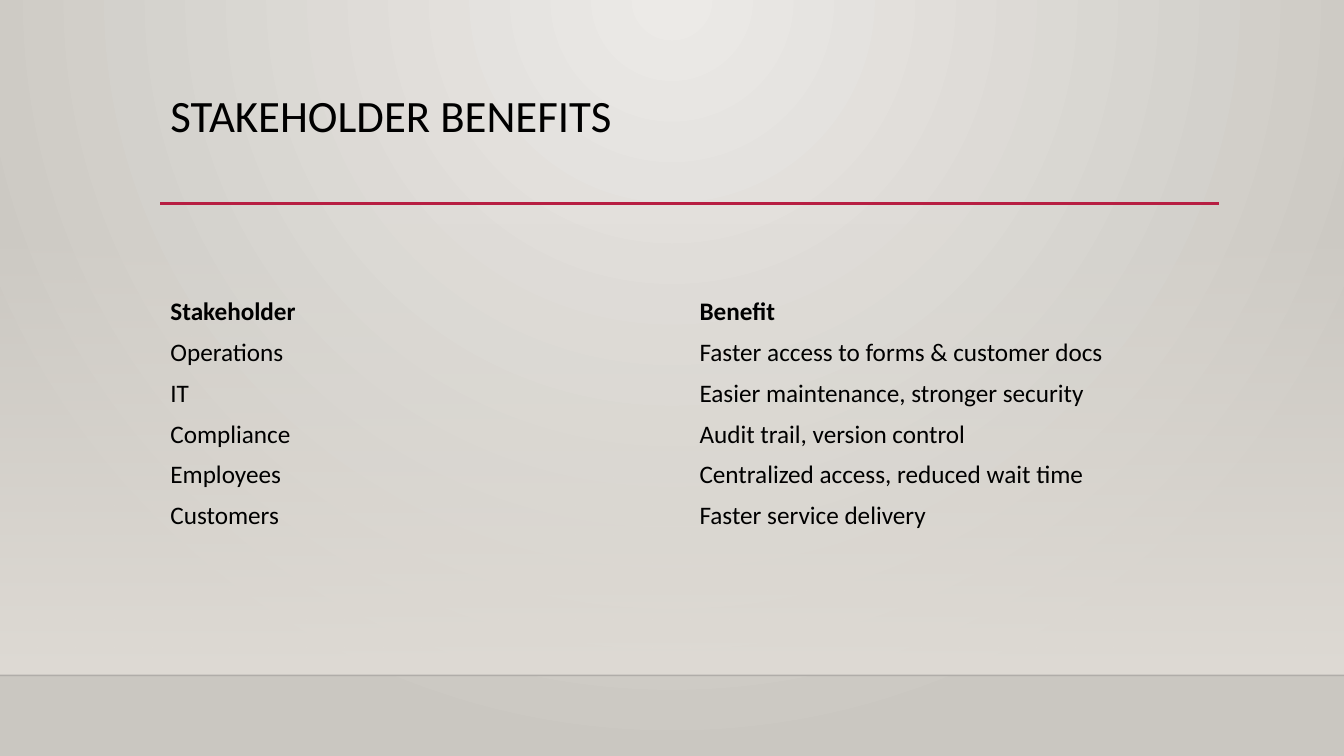
import pptx
import pptx.dml.color
import pptx.enum.shapes
import pptx.enum.text
import pptx.oxml.ns
import pptx.oxml.xmlchemy
import pptx.util
from lxml import etree
from pptx.util import Cm

COLORS = {
    "glow": "ECEAE7",
    "edge": "CAC7C1",
    "wall": "DFDBD5",
    "floor line": "000001",
    "accent": "B71E42",
    "text": "000000",
}
FONT = "Calibri"
NO_STYLE_NO_GRID = "{2D5ABB26-0587-4C30-8999-92F81FD0307C}"
WIDTH, HEIGHT = 33.87, 19.05
LEFT, CONTENT_WIDTH = 4.04, 26.67
FLOOR = 17.02

BENEFITS = [
    ("Stakeholder", "Benefit"),
    ("Operations", "Faster access to forms & customer docs"),
    ("IT", "Easier maintenance, stronger security"),
    ("Compliance", "Audit trail, version control"),
    ("Employees", "Centralized access, reduced wait time"),
    ("Customers", "Faster service delivery"),
]


def qn(tag):
    return pptx.oxml.ns.qn(tag)


def rgb(name):
    return pptx.dml.color.RGBColor.from_string(COLORS[name])


def set_alpha(color_parent, percent):
    """Make the first RGB colour under the element partly transparent."""
    color = next(color_parent.iter(qn("a:srgbClr")))
    etree.SubElement(color, qn("a:alpha"), val=str(percent * 1000))


class SlideBuilder:
    """Holds the text style and the slide being built."""

    def __init__(self, prs):
        self.s = prs.slides.add_slide(prs.slide_layouts.get_by_name("Title Only"))

    def style(self, p, size, bold=False):
        p.font.name = FONT
        p.font.size = pptx.util.Pt(size)
        p.font.bold = bold
        p.font.color.rgb = rgb("text")

    def gradient(self, fill, start, end):
        fill.gradient()
        for stop, name in zip(fill.gradient_stops, (start, end)):
            stop.color.rgb = rgb(name)
        for stop, position in zip(fill.gradient_stops, (0, 1)):
            stop.position = position

    def background(self):
        """Radial glow spreading from the top centre."""
        self.gradient(self.s.background.fill, "glow", "edge")
        grad = next(self.s.element.iter(qn("a:gradFill")))
        grad.remove(grad.find(qn("a:lin")))
        circle = etree.SubElement(grad, qn("a:path"), {"path": "circle"})
        etree.SubElement(circle, qn("a:fillToRect"), l="43000", r="43000", b="100000")

    def wall(self, top, bottom):
        """Full-width panel that fades in downwards."""
        sp = self.s.shapes.add_shape(
            pptx.enum.shapes.MSO_SHAPE.RECTANGLE, 0, Cm(top), Cm(WIDTH), Cm(bottom - top))
        sp.shadow.inherit = False
        sp.line.fill.background()
        self.gradient(sp.fill, "wall", "wall")
        sp.fill.gradient_angle = 270
        set_alpha(sp.element.spPr, 0)

    def rule(self, left, right, y, color, width, alpha=None):
        line = self.s.shapes.add_connector(
            pptx.enum.shapes.MSO_CONNECTOR.STRAIGHT, Cm(left), Cm(y), Cm(right), Cm(y))
        line.line.color.rgb = rgb(color)
        line.line.width = pptx.util.Pt(width)
        etree.SubElement(line.element.spPr, qn("a:effectLst"))
        if alpha is not None:
            set_alpha(line.element.spPr, alpha)

    def title(self, text, top, height):
        sp = self.s.shapes.title
        sp.left, sp.top = Cm(LEFT), Cm(top)
        sp.width, sp.height = Cm(CONTENT_WIDTH), Cm(height)
        tf = sp.text_frame
        tf.text = text
        tf.word_wrap = True
        tf.auto_size = pptx.enum.text.MSO_AUTO_SIZE.NONE
        tf.vertical_anchor = pptx.enum.text.MSO_ANCHOR.TOP
        p = tf.paragraphs[0]
        p.alignment = pptx.enum.text.PP_ALIGN.LEFT
        p.line_spacing = 0.9
        self.style(p, 32)

    def table(self, rows, top, row_height):
        frame = self.s.shapes.add_table(
            len(rows), len(rows[0]), Cm(LEFT), Cm(top),
            Cm(CONTENT_WIDTH), Cm(row_height * len(rows)))
        table = frame.table
        table.horz_banding = False
        next(frame.element.iter(qn("a:tableStyleId"))).text = NO_STYLE_NO_GRID
        for i, row in enumerate(rows):
            for j, text in enumerate(row):
                cell = table.cell(i, j)
                cell.text = text
                cell.fill.background()
                cell.vertical_anchor = pptx.enum.text.MSO_ANCHOR.MIDDLE
                self.style(cell.text_frame.paragraphs[0], 18, bold=i == 0)


def main():
    prs = pptx.Presentation()
    prs.slide_width, prs.slide_height = Cm(WIDTH), Cm(HEIGHT)
    slide = SlideBuilder(prs)
    slide.background()
    slide.wall(5.61, FLOOR)
    slide.rule(0, WIDTH, FLOOR, "floor line", 1, alpha=20)
    slide.rule(LEFT, 30.73, 5.13, "accent", 2.5)
    slide.title("STAKEHOLDER BENEFITS", 2.24, 2.92)
    slide.table(BENEFITS, 7.34, 1.02)
    prs.save("out.pptx")


if __name__ == "__main__":
    main()
